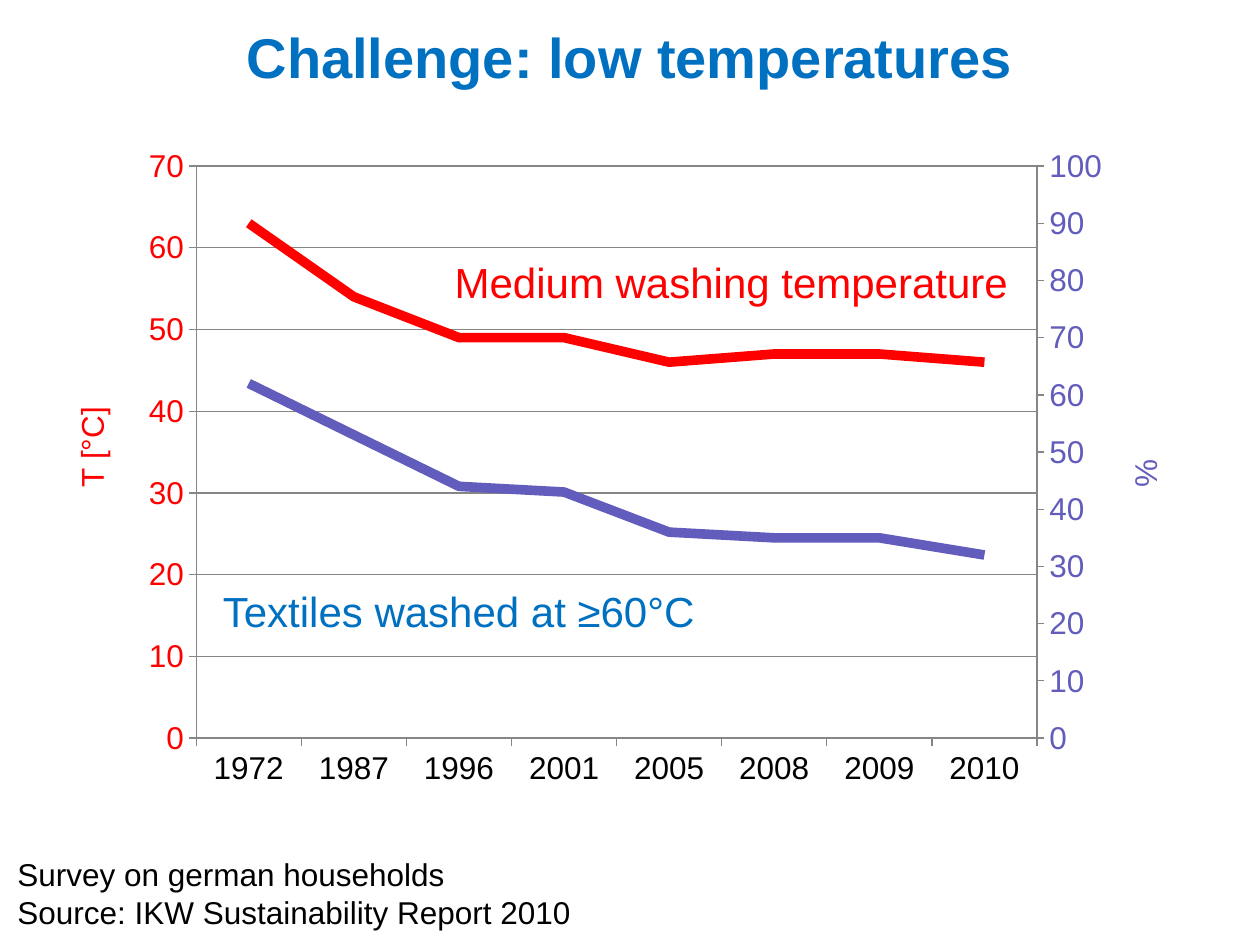
from copy import deepcopy

from pptx import Presentation
from pptx.chart.axis import ValueAxis
from pptx.chart.data import CategoryChartData
from pptx.dml.color import RGBColor
from pptx.enum.chart import XL_CHART_TYPE, XL_TICK_MARK
from pptx.enum.text import MSO_ANCHOR, MSO_AUTO_SIZE, PP_ALIGN
from pptx.oxml import parse_xml
from pptx.oxml.ns import nsdecls, qn
from pptx.util import Inches, Pt

WIDTH, HEIGHT = Inches(10), Inches(7.5)
FONT = "Arial"
BLACK = RGBColor(0x00, 0x00, 0x00)
BLUE = RGBColor(0x00, 0x70, 0xC0)
RED = RGBColor(0xFF, 0x00, 0x00)
VIOLET = RGBColor(0x62, 0x5C, 0xBC)
GRAY = RGBColor(0x86, 0x86, 0x86)

YEARS = ["1972", "1987", "1996", "2001", "2005", "2008", "2009", "2010"]
DEGREES = [63, 54, 49, 49, 46, 47, 47, 46]
SHARES = [62, 53, 44, 43, 36, 35, 35, 32]

# Plot area as shares of the chart's size
PLOT = {"x": 0.067, "y": 0.047, "w": 0.848, "h": 0.86}


def style(font, size, color, bold=False):
    font.name, font.size, font.bold = FONT, Pt(size), bold
    font.color.rgb = color


def write(frame, text, size=18, color=BLACK, bold=False, align=PP_ALIGN.LEFT, pitch=None):
    frame.text = text
    for para in frame.paragraphs:
        para.alignment = align
        if pitch:
            para.line_spacing = Pt(pitch)
        for run in para.runs:
            style(run.font, size, color, bold)


def add_title(slide, text):
    title = slide.shapes.title
    title.left, title.top = int(WIDTH * 0.05), Inches(0.21)
    title.width, title.height = int(WIDTH * 0.9), Inches(0.77)
    frame = title.text_frame
    frame.margin_left = frame.margin_right = 0
    frame.margin_top = frame.margin_bottom = 0
    frame.vertical_anchor = MSO_ANCHOR.TOP
    write(frame, text, size=32, color=BLUE, bold=True, align=PP_ALIGN.CENTER, pitch=36.3)


def add_label(slide, text, left, top, width, height, turn=0, **form):
    box = slide.shapes.add_textbox(*map(Inches, (left, top, width, height)))
    box.rotation = turn
    frame = box.text_frame
    frame.word_wrap = False
    frame.auto_size = MSO_AUTO_SIZE.SHAPE_TO_FIT_TEXT
    write(frame, text, **form)


def set_axis(axis, color, top=None):
    style(axis.tick_labels.font, 18, color)
    axis.major_tick_mark = XL_TICK_MARK.OUTSIDE
    axis.minor_tick_mark = XL_TICK_MARK.NONE
    axis.format.line.color.rgb = GRAY
    axis.format.line.width = Pt(0.75)
    if top:
        axis.minimum_scale, axis.maximum_scale, axis.major_unit = 0, top, 10


def set_plot(area):
    for old in area.findall(qn("c:layout")):
        area.remove(old)
    parts = "".join(f'<c:{key} val="{val}"/>' for key, val in PLOT.items())
    area.insert(0, parse_xml(
        f'<c:layout {nsdecls("c")}><c:manualLayout><c:layoutTarget val="inner"/>'
        f'<c:xMode val="edge"/><c:yMode val="edge"/>{parts}'
        '</c:manualLayout></c:layout>'))


def add_right(area):
    """Move the second series to its own line plot with a right axis."""
    left = area.find(qn("c:lineChart"))
    right = deepcopy(left)
    left.remove(left.findall(qn("c:ser"))[1])
    right.remove(right.findall(qn("c:ser"))[0])
    left.addnext(right)

    cat = deepcopy(area.find(qn("c:catAx")))
    val = deepcopy(area.find(qn("c:valAx")))
    ids = ["50010", "50020"]
    for ref, num in zip(right.findall(qn("c:axId")), ids):
        ref.set("val", num)
    for axis, own, other in ((cat, *ids), (val, *reversed(ids))):
        axis.find(qn("c:axId")).set("val", own)
        axis.find(qn("c:crossAx")).set("val", other)
    cat.find(qn("c:delete")).set("val", "1")
    val.find(qn("c:axPos")).set("val", "r")
    val.find(qn("c:crosses")).set("val", "max")
    area.find(qn("c:valAx")).addnext(val)
    val.addnext(cat)

    axis = ValueAxis(val)
    axis.has_major_gridlines = False
    set_axis(axis, VIOLET, top=100)


def add_lines(slide):
    data = CategoryChartData()
    data.categories = YEARS
    data.add_series("Series 1", DEGREES)
    data.add_series("Series 2", SHARES)
    place = map(Inches, (1.03, 1.07, 7.87, 5.28))
    chart = slide.shapes.add_chart(XL_CHART_TYPE.LINE, *place, data).chart
    style(chart.font, 10, BLACK)
    chart.has_legend = chart.has_title = False
    chart.plots[0].vary_by_categories = False
    for line, color in zip(chart.plots[0].series, (RED, VIOLET)):
        line.smooth = False
        line.format.line.color.rgb = color
        line.format.line.width = Pt(5.5)

    # Left and bottom axes
    set_axis(chart.category_axis, BLACK)
    axis = chart.value_axis
    set_axis(axis, RED, top=70)
    axis.has_major_gridlines = True
    axis.major_gridlines.format.line.color.rgb = GRAY
    axis.major_gridlines.format.line.width = Pt(0.75)

    area = chart.plots[0]._element.getparent()
    set_plot(area)
    add_right(area)


def main():
    deck = Presentation()
    deck.slide_width, deck.slide_height = WIDTH, HEIGHT
    slide = deck.slides.add_slide(deck.slide_layouts[5])
    add_title(slide, "Challenge: low temperatures")
    add_lines(slide)

    # Axis names
    add_label(slide, "T [°C]", 0.3, 3.34, 0.85, 0.4, turn=270, color=RED)
    add_label(slide, "%", 8.87, 3.55, 0.43, 0.4, turn=270, color=VIOLET)

    # Line names
    add_label(slide, "Medium washing temperature", 3.51, 1.99, 4.64, 0.5, size=24, color=RED)
    add_label(slide, "Textiles washed at ≥60°C", 1.67, 4.6, 3.98, 0.5, size=24, color=BLUE)

    # Source note
    add_label(slide, "Survey on german households\nSource: IKW Sustainability Report 2010",
              0.04, 6.74, 4.63, 0.71)
    deck.save("out.pptx")


if __name__ == "__main__":
    main()
